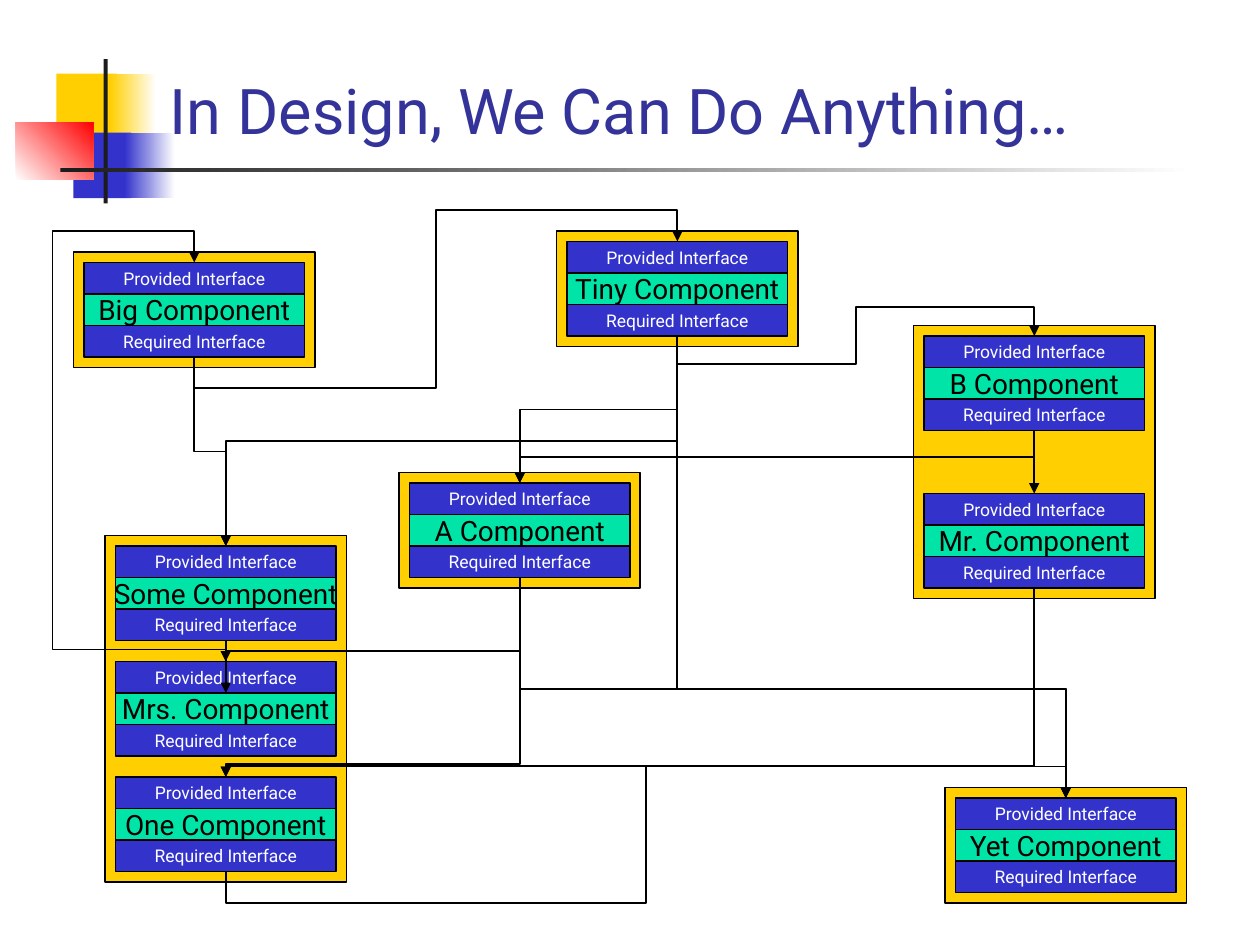
"""Build the slide of components linked through their interfaces."""
from lxml.etree import SubElement
from pptx import Presentation
from pptx.dml.color import RGBColor
from pptx.enum.shapes import MSO_CONNECTOR as Link, MSO_SHAPE as Shape
from pptx.enum.text import MSO_ANCHOR as Anchor, PP_ALIGN as Align
from pptx.oxml.ns import qn
from pptx.util import Pt

PX = 9525
THIN = 1588
WHITE = RGBColor(0xFF, 0xFF, 0xFF)
BLACK = RGBColor(0, 0, 0)
GOLD = RGBColor(0xFF, 0xCF, 0x01)
BLUE = RGBColor(0x33, 0x33, 0xCC)
GREEN = RGBColor(0x00, 0xE4, 0xA8)
RED = RGBColor(0xFF, 0, 0)
DARK = RGBColor(0x1C, 0x1C, 0x1C)
NAVY = RGBColor(0x33, 0x33, 0x99)

TITLE = "In Design, We Can Do Anything…"
WIDE, ROW, PAD = 168, 24, 8
TALL = 3 * ROW

DECOR = [
    ((43, 56, 46, 50), (GOLD,), 0),
    ((84, 56, 35, 50), (GOLD, WHITE), 0),
    ((56, 101, 44, 50), (BLUE,), 0),
    ((95, 101, 38, 50), (BLUE, WHITE), 0),
    ((12, 93, 59, 44), (WHITE, RED), 45),
    ((79, 45, 3, 110), (DARK,), 0),
    ((46, 128, 864, 3), (DARK, WHITE), 0),
]
PARTS = {
    "Big": (64, 200), "Tiny": (432, 184), "B": (704, 256),
    "Mr.": (704, 376), "A": (312, 368), "Yet": (728, 608),
    "Some": (88, 416), "One": (88, 592), "Mrs.": (88, 504),
}
FRAMES = [("Some", "One"), ("A", "A"), ("B", "Mr."),
          ("Yet", "Yet"), ("Big", "Big"), ("Tiny", "Tiny")]
BACK = [
    ("B", "A", (348,), 0),
    ("B", "Mr.", (), 0),
    ("Tiny", "B", (280, 652, 232), 0),
    ("Tiny", "A", (312,), 0),
    ("A", "Yet", (525,), 0),
    ("One", "Yet", (688, 492, 584), 0),
]
FRONT = [
    ("Some", "Mrs.", (), 0),
    ("A", "One", (582,), 0),
    ("A", "Mrs.", (496,), ROW),
    ("Some", "Big", (495, 40, 176), 0),
    ("Big", "Some", (344,), 0),
    ("Big", "Tiny", (296, 332, 160), 0),
    ("Tiny", "Some", (336,), 0),
    ("Tiny", "Yet", (525,), 0),
    ("Mr.", "One", (584,), 0),
]
TURNS = {
    (True, False): (90, ""), (True, True): (270, "H"),
    (False, False): (270, "V"), (False, True): (90, "HV"),
}


def apply(item, **vals):
    for key, val in vals.items():
        setattr(item, key, val)


def scale(*nums):
    return [round(num * PX) for num in nums]


def write(shape, text, size, color, align, **body):
    frame = shape.text_frame
    apply(frame, **body)
    para = frame.paragraphs[0]
    para.alignment = align
    run = para.add_run()
    run.text = text
    apply(run.font, name="Roboto", size=Pt(size))
    run.font.color.rgb = color


def block(slide, area, colors, angle=0, edge=True):
    shape = slide.shapes.add_shape(Shape.RECTANGLE, *scale(*area))
    shape.shadow.inherit = False
    if len(colors) == 1:
        shape.fill.solid()
        shape.fill.fore_color.rgb = colors[0]
    else:
        shape.fill.gradient()
        shape.fill.gradient_angle = angle
        for stop, color in zip(shape.fill.gradient_stops, colors):
            stop.color.rgb = color
    if edge:
        shape.line.color.rgb = BLACK
        shape.line.width = Pt(1)
    else:
        shape.line.fill.background()
    return shape


def bend(line, start, end, turns):
    (ax, ay), (bx, by) = start, end
    run, drop = bx - ax, by - ay
    long, wide = max(abs(drop) * PX, THIN), abs(run) * PX
    angle, flips = TURNS[drop >= 0, run > 0]
    midx, midy = scale((ax + bx) / 2, (ay + by) / 2)
    apply(line, left=midx - long // 2, top=midy - wide // 2,
          width=long, height=wide, rotation=angle)
    props = line._element.spPr
    frame = props.find(qn("a:xfrm"))
    for flip in flips:
        frame.set("flip" + flip, "1")
    geom = props.find(qn("a:prstGeom"))
    geom.set("prst", f"bentConnector{len(turns) + 2}")
    guides = geom.find(qn("a:avLst"))
    span = drop or THIN / PX
    for num, pos in enumerate(turns):
        part = (pos - ax) / run if num == 1 else (pos - ay) / span
        SubElement(guides, qn("a:gd"), name=f"adj{num + 1}",
                   fmla=f"val {round(part * 100000)}")


def join(slide, source, target, turns, shift):
    (ax, ay), (bx, by) = PARTS[source], PARTS[target]
    start = ax + WIDE // 2, ay + TALL + shift
    end = bx + WIDE // 2, by + shift
    kind = Link.ELBOW if turns else Link.STRAIGHT
    line = slide.shapes.add_connector(kind, *scale(*start, *end))
    if turns:
        frame = line._element.spPr.find(qn("a:xfrm"))
        for flip in ("flipH", "flipV"):
            frame.attrib.pop(flip, None)
        bend(line, start, end, turns)
    line.line.color.rgb = BLACK
    line.line.width = Pt(1)
    SubElement(line.line._get_or_add_ln(), qn("a:tailEnd"), type="triangle")
    SubElement(line._element.spPr, qn("a:effectLst"))


def stack(slide, name, left, top):
    rows = [("Provided Interface", BLUE, 10, WHITE),
            (f"{name} Component", GREEN, 16, BLACK),
            ("Required Interface", BLUE, 10, WHITE)]
    for num, (text, fill, size, color) in enumerate(rows):
        shape = block(slide, (left, top + num * ROW, WIDE, ROW), (fill,))
        write(shape, text, size, color, Align.CENTER,
              word_wrap=False, vertical_anchor=Anchor.MIDDLE)


def main():
    deck = Presentation()
    apply(deck, slide_width=960 * PX, slide_height=720 * PX)
    slide = deck.slides.add_slide(deck.slide_layouts[6])
    for area, colors, angle in DECOR:
        block(slide, area, colors, angle, edge=False)
    title = slide.shapes.add_textbox(*scale(120, 37, 818, 80))
    write(title, TITLE, 36, NAVY, Align.LEFT,
          word_wrap=True, vertical_anchor=Anchor.BOTTOM)
    for first, last in FRAMES:
        left, top = PARTS[first]
        high = PARTS[last][1] - top + TALL
        block(slide, (left - PAD, top - PAD, WIDE + 2 * PAD, high + 2 * PAD),
              (GOLD,))
    for link in BACK:
        join(slide, *link)
    for name, spot in PARTS.items():
        stack(slide, name, *spot)
    for link in FRONT:
        join(slide, *link)
    deck.save("out.pptx")


if __name__ == "__main__":
    main()
